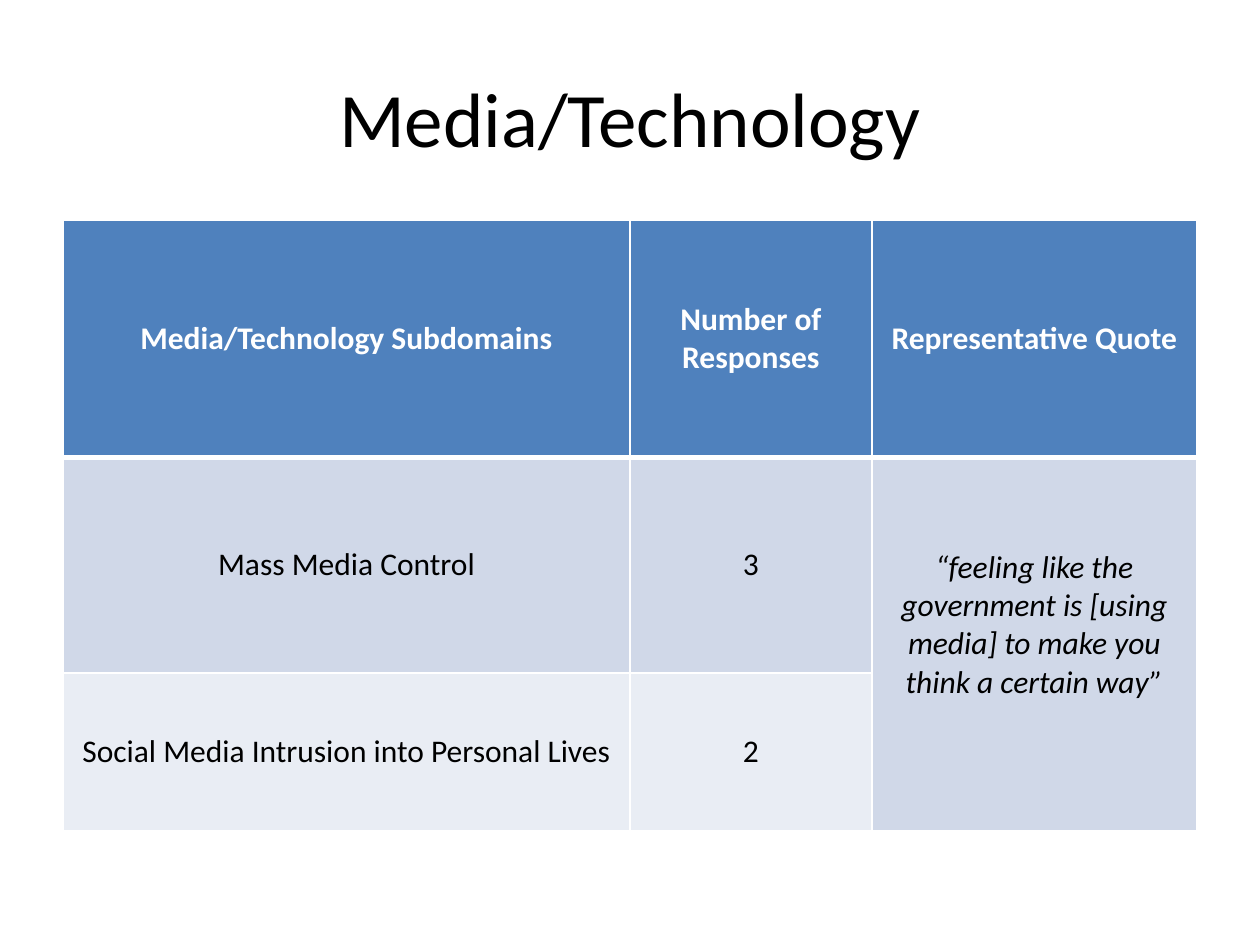
from dataclasses import dataclass

from lxml.etree import SubElement
from pptx import Presentation
from pptx.dml.color import RGBColor
from pptx.enum.text import MSO_ANCHOR as Anchor, PP_ALIGN as Align
from pptx.oxml.ns import qn
from pptx.slide import Slide
from pptx.table import Table, _Cell as Cell
from pptx.text.text import _Paragraph as Paragraph
from pptx.util import Inches, Pt

BLACK = RGBColor(0x00, 0x00, 0x00)
WHITE = RGBColor(0xFF, 0xFF, 0xFF)
HEADER_BLUE = RGBColor(0x4F, 0x81, 0xBD)
BAND_DARK = RGBColor(0xD0, 0xD8, 0xE8)
BAND_LIGHT = RGBColor(0xE9, 0xED, 0xF4)

COLUMN_WIDTHS = (4.5, 1.92, 2.58)


@dataclass(frozen=True)
class TableRow:
    texts: tuple[str, ...]
    height: float
    fill: RGBColor
    color: RGBColor = BLACK
    bold: bool = False
    rule_below: float = 1


ROWS = (
    TableRow(
        ("Media/Technology Subdomains", "Number of Responses", "Representative Quote"),
        1.88, HEADER_BLUE, WHITE, bold=True, rule_below=3,
    ),
    TableRow(
        (
            "Mass Media Control",
            "3",
            "“feeling like the government is [using media] to make you think a certain way”",
        ),
        1.71, BAND_DARK,
    ),
    TableRow(("Social Media Intrusion into Personal Lives", "2"), 1.25, BAND_LIGHT),
)


def write_text(paragraph: Paragraph, text: str, color: RGBColor, **formats) -> None:
    paragraph.alignment = Align.CENTER
    run = paragraph.add_run()
    run.text = text
    run.font.color.rgb = color
    for name, value in {"name": "Calibri", **formats}.items():
        setattr(run.font, name, value)


def draw_borders(cell: Cell, widths: dict[str, float]) -> None:
    properties = cell._tc.get_or_add_tcPr()
    for position, (side, width) in enumerate(widths.items()):
        line = properties.makeelement(qn(f"a:ln{side}"), {"w": str(Pt(width))})
        fill = SubElement(line, qn("a:solidFill"))
        SubElement(fill, qn("a:srgbClr"), val=str(WHITE))
        properties.insert(position, line)


def fill_row(table: Table, index: int, row: TableRow) -> None:
    table.rows[index].height = Inches(row.height)
    rule_above = ROWS[index - 1].rule_below if index else 1
    for column in range(len(COLUMN_WIDTHS)):
        cell = table.cell(index, column)
        cell.fill.solid()
        cell.fill.fore_color.rgb = row.fill
        cell.vertical_anchor = Anchor.MIDDLE
        draw_borders(cell, {"L": 1, "R": 1, "T": rule_above, "B": row.rule_below})
        if column < len(row.texts):
            write_text(
                cell.text_frame.paragraphs[0], row.texts[column], row.color,
                size=Pt(18), bold=row.bold,
            )


def add_title(slide: Slide, text: str) -> None:
    shape = slide.shapes.add_textbox(Inches(0.5), Inches(0.3), Inches(9), Inches(1.25))
    frame = shape.text_frame
    frame.word_wrap = True
    frame.vertical_anchor = Anchor.MIDDLE
    write_text(frame.paragraphs[0], text, BLACK, size=Pt(44))


def add_responses_table(slide: Slide) -> None:
    table = slide.shapes.add_table(
        len(ROWS), len(COLUMN_WIDTHS), Inches(0.5), Inches(1.75),
        Inches(sum(COLUMN_WIDTHS)), Inches(sum(row.height for row in ROWS)),
    ).table
    for column, width in zip(table.columns, COLUMN_WIDTHS):
        column.width = Inches(width)
    for index, row in enumerate(ROWS):
        fill_row(table, index, row)
    quote = table.cell(1, 2)
    quote.merge(table.cell(2, 2))
    quote.margin_bottom = Inches(0.35)
    quote.text_frame.paragraphs[0].runs[0].font.italic = True


def main() -> None:
    presentation = Presentation()
    presentation.slide_width = Inches(10)
    presentation.slide_height = Inches(7.5)
    slide = presentation.slides.add_slide(presentation.slide_layouts[6])
    add_title(slide, "Media/Technology")
    add_responses_table(slide)
    presentation.save("out.pptx")


if __name__ == "__main__":
    main()
